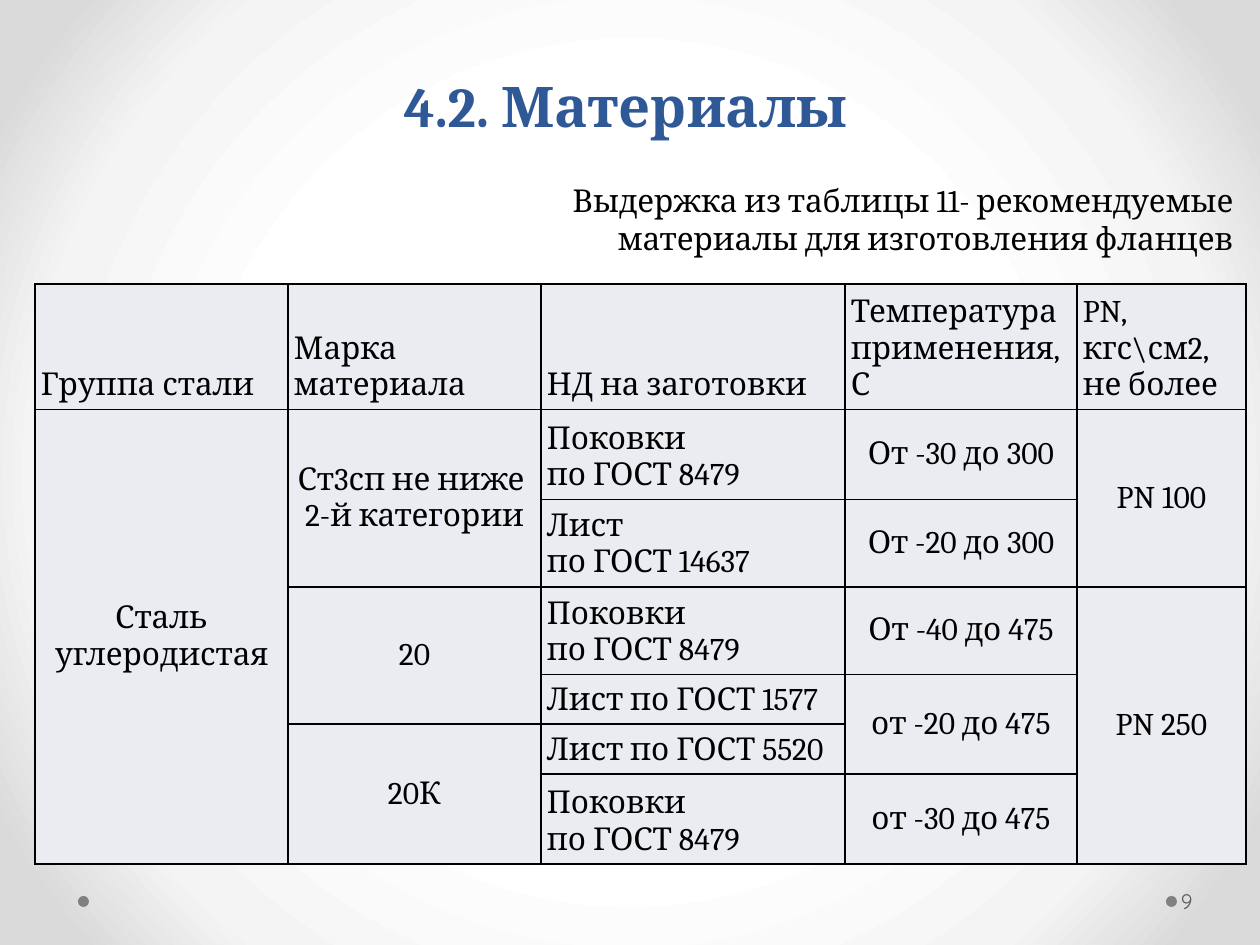
"""Builds the slide on recommended flange materials."""
from lxml import etree
from pptx import Presentation
from pptx import util as u
from pptx.dml.color import RGBColor
from pptx.enum import shapes, text
from pptx.oxml import parse_xml
from pptx.oxml.ns import nsdecls, qn

SCALE = 914400 // 126
LEFT, CENTER, RIGHT = text.PP_ALIGN.LEFT, text.PP_ALIGN.CENTER, text.PP_ALIGN.RIGHT
TOP, MIDDLE, BOTTOM = (text.MSO_ANCHOR.TOP, text.MSO_ANCHOR.MIDDLE,
                       text.MSO_ANCHOR.BOTTOM)
COLUMNS = [253, 253, 304, 232, 169]
ROWS = [121, 90, 86, 85, 49, 49, 90]
FORGING = "Поковки\nпо ГОСТ 8479"
CELLS = [
    ["Группа стали", "Марка материала", "НД на заготовки",
     "Температура применения, С", "PN, кгс\\см2,\nне более"],
    ["Сталь углеродистая", "Ст3сп не ниже \n2-й категории", FORGING,
     "От -30 до 300", "PN 100"],
    [None, None, "Лист\nпо ГОСТ 14637", "От -20 до 300", None],
    [None, "20", FORGING, "От -40 до 475", "PN 250"],
    [None, None, "Лист по ГОСТ 1577", "от -20 до 475", None],
    [None, "20К", "Лист по ГОСТ 5520", None, None],
    [None, None, FORGING, "от -30 до 475", None],
]


def px(n):
    return u.Emu(n * SCALE)


def color(value):
    return RGBColor.from_string(value)


def place(sp, x, y, w, h):
    sp.left, sp.top, sp.width, sp.height = px(x), px(y), px(w), px(h)


def write(tf, content, size, fill, font="Cambria", align=LEFT, bold=False):
    tf.text = content
    for p in tf.paragraphs:
        p.alignment = align
        p.font.size = u.Pt(size)
        p.font.name = font
        p.font.bold = bold
        p.font.color.rgb = color(fill)


def set_background(s):
    stops = "".join(
        f'<a:gs pos="{pos * 1000}"><a:srgbClr val="{value}"/></a:gs>'
        for pos, value in [(50, "FFFFFF"), (76, "F4F4F4"), (92, "DADADA")])
    s.element.cSld.insert(0, parse_xml(
        f'<p:bg {nsdecls("p", "a")}><p:bgPr><a:gradFill rotWithShape="1">'
        f'<a:gsLst>{stops}</a:gsLst><a:path path="circle">'
        '<a:fillToRect l="50000" t="50000" r="50000" b="50000"/></a:path>'
        '</a:gradFill><a:effectLst/></p:bgPr></p:bg>'))


def add_dot(s, x):
    sp = s.shapes.add_shape(shapes.MSO_SHAPE.OVAL, px(x), px(896), px(11), px(11))
    sp.shadow.inherit = False
    sp.fill.solid()
    sp.fill.fore_color.rgb = color("808080")
    sp.line.fill.background()


def set_title(s, content):
    sp = s.shapes.title
    place(sp, 15, 0, 1221, 145)
    sp.text_frame.vertical_anchor = BOTTOM
    write(sp.text_frame, content, 32, "2F5897", align=CENTER, bold=True)
    sp.text_frame.paragraphs[0].line_spacing = u.Pt(58)


def add_text(s, box, content, size, fill, anchor=TOP, **style):
    tf = s.shapes.add_textbox(*map(px, box)).text_frame
    tf.word_wrap = True
    tf.vertical_anchor = anchor
    write(tf, content, size, fill, **style)
    return tf


def add_borders(cell):
    tc_pr = cell._tc.get_or_add_tcPr()
    for side in ("lnL", "lnR", "lnT", "lnB"):
        ln = etree.SubElement(tc_pr, qn(f"a:{side}"), w=str(u.Pt(1)))
        fill = etree.SubElement(ln, qn("a:solidFill"))
        etree.SubElement(fill, qn("a:srgbClr"), val="000000")


def format_cell(cell, anchor):
    add_borders(cell)
    cell.fill.solid()
    cell.fill.fore_color.rgb = color("EAECF2")
    cell.vertical_anchor = anchor
    cell.margin_left = cell.margin_right = px(6)
    cell.margin_top = cell.margin_bottom = px(6)


def merge_down(table, row, col):
    last = row
    while last + 1 < len(CELLS) and CELLS[last + 1][col] is None:
        last += 1
    if last > row:
        table.cell(row, col).merge(table.cell(last, col))


def add_materials_table(s):
    table = s.shapes.add_table(len(ROWS), len(COLUMNS), px(35), px(284),
                               px(sum(COLUMNS)), px(sum(ROWS))).table
    table.first_row = table.horz_banding = False
    for column, width in zip(table.columns, COLUMNS):
        column.width = px(width)
    for row, height in zip(table.rows, ROWS):
        row.height = px(height)
    for i, values in enumerate(CELLS):
        for j, value in enumerate(values):
            cell = table.cell(i, j)
            plain = i == 0 or j == 2
            format_cell(cell, BOTTOM if plain else MIDDLE)
            if value is not None:
                write(cell.text_frame, value, 18, "000000",
                      align=LEFT if plain else CENTER)
                merge_down(table, i, j)


def main():
    prs = Presentation()
    prs.slide_width, prs.slide_height = px(1260), px(945)
    s = prs.slides.add_slide(prs.slide_layouts[5])
    set_background(s)
    for x in (1166, 78):
        add_dot(s, x)
    set_title(s, "4.2. Материалы")
    number = add_text(s, (1177, 876, 77, 50), "9", 12, "595959", MIDDLE,
                      font="Quicksand")
    number.margin_left, number.margin_right = px(4), px(6)
    add_materials_table(s)
    add_text(s, (512, 175, 734, 89),
             "Выдержка из таблицы 11- рекомендуемые материалы "
             "для изготовления фланцев", 18, "000000", align=RIGHT)
    prs.save("out.pptx")


if __name__ == "__main__":
    main()
